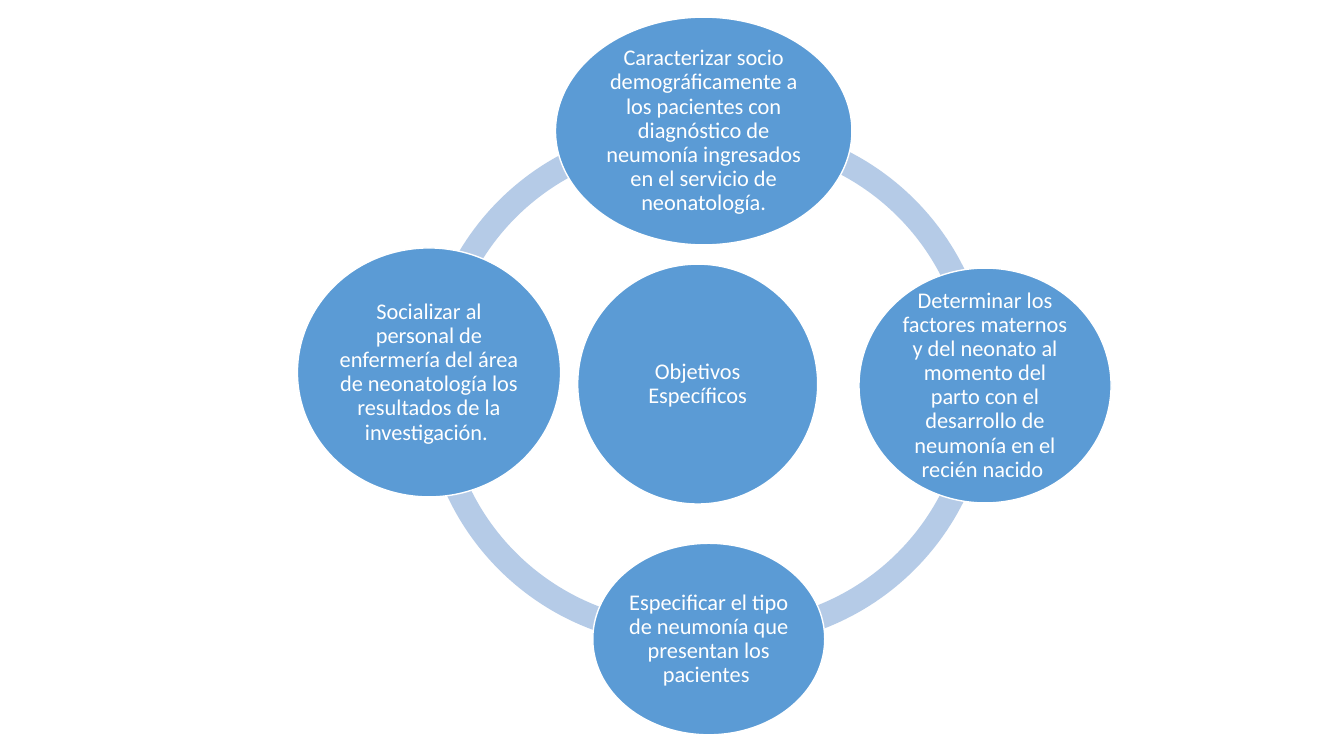
from pptx import Presentation
from pptx.dml.color import RGBColor
from pptx.enum.shapes import MSO_SHAPE
from pptx.enum.text import MSO_ANCHOR, PP_ALIGN
from pptx.util import Inches, Pt

WHITE = RGBColor(0xFF, 0xFF, 0xFF)
BLUE = RGBColor(0x5B, 0x9B, 0xD5)
PALE_BLUE = RGBColor(0xB5, 0xCB, 0xE7)

RING_SIZE = 5.18
RING_THICKNESS = 0.046
ADJUSTMENT_PER_DEGREE = 0.6  # 60,000 angle units per degree, in 100,000ths

# left, top, start angle, end angle (degrees, clockwise)
RING_ARCS = [
    (4.19, 1.23, 182.82, 274.54),
    (4.19, 1.23, 84.43, 182.92),
    (4.65, 1.23, 0.14, 94.81),
    (4.65, 1.22, 264.16, 0.30),
]

# left, top, width, height, text
OBJECTIVES = [
    (5.73, 2.62, 2.38, 2.38, "Objetivos Específicos"),
    (5.51, 0.17, 2.94, 2.26,
     "Caracterizar socio demográficamente a los pacientes con diagnóstico "
     "de neumonía ingresados en el servicio de neonatología."),
    (8.52, 2.66, 2.50, 2.33,
     "Determinar los factores maternos y del neonato al momento del parto "
     "con el desarrollo de neumonía en el recién nacido "),
    (5.88, 5.39, 2.30, 1.90,
     "Especificar el tipo de neumonía que presentan los pacientes "),
    (2.95, 2.46, 2.61, 2.47,
     "Socializar al personal de enfermería del área de neonatología los "
     "resultados de la investigación. "),
]

FRAME_FORMAT = {
    "word_wrap": True,
    "vertical_anchor": MSO_ANCHOR.MIDDLE,
    "margin_left": Inches(0.02),
    "margin_top": Inches(0.02),
    "margin_right": Inches(0.02),
    "margin_bottom": Inches(0.02),
}
PARAGRAPH_FORMAT = {"alignment": PP_ALIGN.CENTER, "line_spacing": 0.9}
FONT_FORMAT = {"name": "Calibri", "size": Pt(16)}


def apply_format(target, values):
    for name, value in values.items():
        setattr(target, name, value)


def add_filled_shape(page, kind, bounds, color):
    shape = page.shapes.add_shape(kind, *(Inches(value) for value in bounds))
    shape.shadow.inherit = False
    shape.fill.solid()
    shape.fill.fore_color.rgb = color
    return shape


def add_ring_arc(page, left, top, start, end):
    arc = add_filled_shape(page, MSO_SHAPE.BLOCK_ARC,
                           (left, top, RING_SIZE, RING_SIZE), PALE_BLUE)
    arc.line.fill.background()
    arc.adjustments[0] = start * ADJUSTMENT_PER_DEGREE
    arc.adjustments[1] = end * ADJUSTMENT_PER_DEGREE
    arc.adjustments[2] = RING_THICKNESS


def add_objective(page, *bounds, text):
    ellipse = add_filled_shape(page, MSO_SHAPE.OVAL, bounds, BLUE)
    ellipse.line.color.rgb = WHITE
    ellipse.line.width = Pt(1)
    frame = ellipse.text_frame
    apply_format(frame, FRAME_FORMAT)
    para = frame.paragraphs[0]
    apply_format(para, PARAGRAPH_FORMAT)
    span = para.add_run()
    span.text = text
    apply_format(span.font, FONT_FORMAT)
    span.font.color.rgb = WHITE


def main():
    deck = Presentation()
    deck.slide_width = Inches(13.33)
    deck.slide_height = Inches(7.5)
    page = deck.slides.add_slide(deck.slide_layouts[6])
    for arc in RING_ARCS:
        add_ring_arc(page, *arc)
    for *bounds, text in OBJECTIVES:
        add_objective(page, *bounds, text=text)
    deck.save("out.pptx")


if __name__ == "__main__":
    main()
